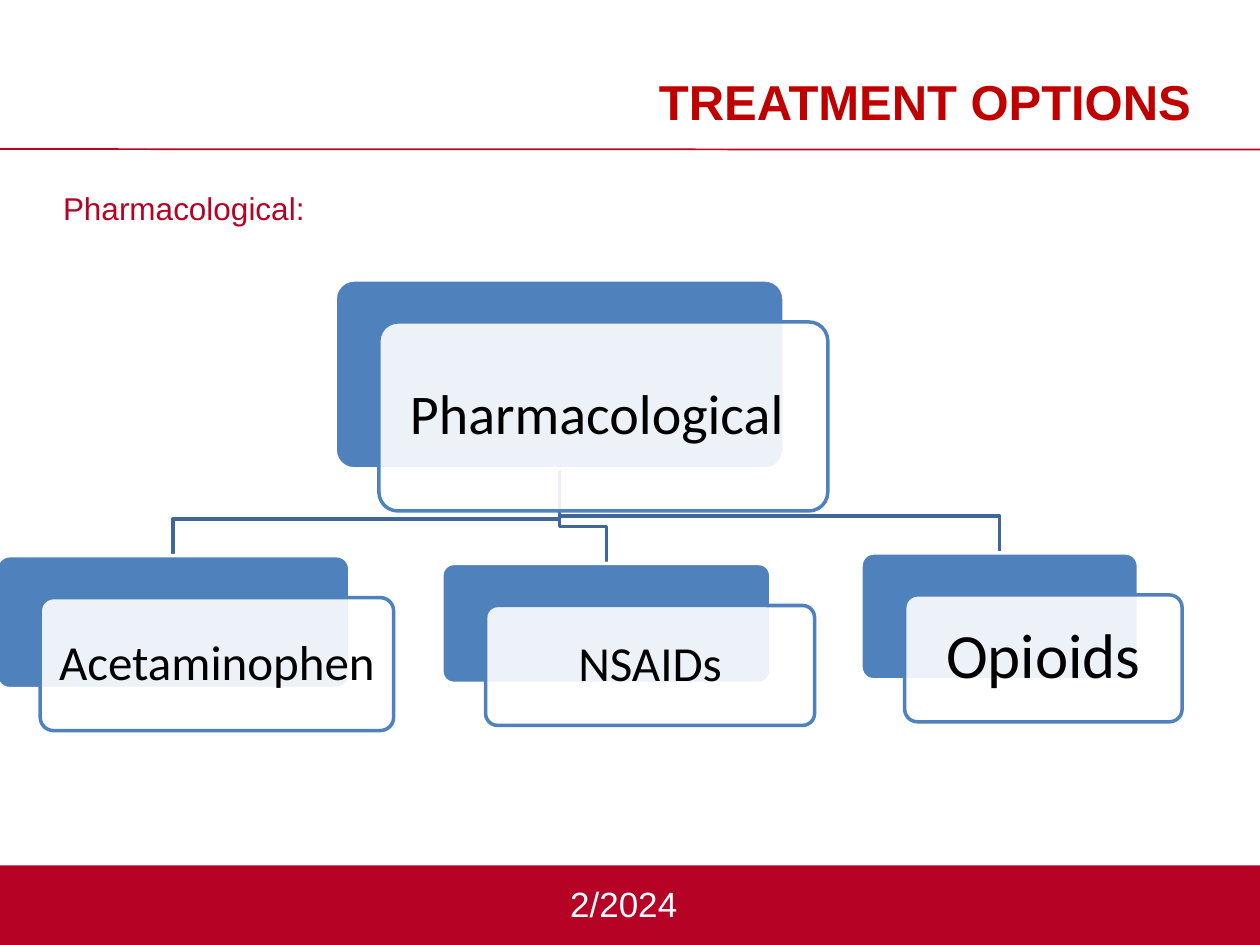
from dataclasses import dataclass

from lxml.etree import SubElement
from pptx import Presentation
from pptx.dml.color import RGBColor
from pptx.enum.shapes import MSO_CONNECTOR as Connector, MSO_SHAPE as Preset
from pptx.enum.text import MSO_ANCHOR as Anchor, PP_ALIGN as Align
from pptx.oxml.ns import qn
from pptx.util import Pt

RED = "B60225"
BLUE = "4F81BD"
WHITE = "FFFFFF"
FRONT_SHIFT = (25, 24)
ELBOW_RISE = 21


@dataclass(frozen=True)
class Card:
    label: str
    left: float
    top: float
    width: float
    height: float
    size: float

    @property
    def center(self) -> float:
        return self.left + self.width / 2

    @property
    def bottom(self) -> float:
        return self.top + self.height


@dataclass(frozen=True)
class Label:
    text: str
    left: float
    top: float
    width: float
    height: float
    size: float
    color: str
    align: Align
    margins: tuple
    bold: bool = False


def color_of(code: str) -> RGBColor:
    return RGBColor.from_string(code)


def paint(shape, fill: str | None, line: str | None) -> None:
    shape.shadow.inherit = False
    if fill:
        shape.fill.solid()
        shape.fill.fore_color.rgb = color_of(fill)
    else:
        shape.fill.background()
    if line:
        shape.line.color.rgb = color_of(line)
        shape.line.width = Pt(2)
    else:
        shape.line.fill.background()


def write(frame, text: str, font: str, size: float, color: str, align: Align,
          margins: tuple, bold: bool = False) -> None:
    frame.text = text
    frame.margin_left, frame.margin_top, frame.margin_right, frame.margin_bottom = map(Pt, margins)
    para = frame.paragraphs[0]
    para.alignment = align
    span = para.runs[0]
    span.font.name = font
    span.font.size = Pt(size)
    span.font.bold = bold
    span.font.color.rgb = color_of(color)


def draw_label(page, label: Label) -> None:
    box = page.shapes.add_textbox(Pt(label.left), Pt(label.top), Pt(label.width), Pt(label.height))
    box.text_frame.word_wrap = True
    box.text_frame.vertical_anchor = Anchor.TOP
    write(box.text_frame, label.text, "Arial", label.size, label.color,
          label.align, label.margins, label.bold)


def draw_branch(page, parent: Card, child: Card) -> None:
    turn = child.top - ELBOW_RISE
    points = [(parent.center, turn), (child.center, turn), (child.center, child.top)]
    builder = page.shapes.build_freeform(Pt(parent.center), Pt(parent.bottom))
    builder.add_line_segments([(Pt(x), Pt(y)) for x, y in points], close=False)
    paint(builder.convert_to_shape(), None, "3F6797")


def draw_panel(page, card: Card, shift: tuple, fill: str, line: str):
    panel = page.shapes.add_shape(
        Preset.ROUNDED_RECTANGLE, Pt(card.left + shift[0]), Pt(card.top + shift[1]),
        Pt(card.width), Pt(card.height))
    panel.adjustments[0] = 0.1
    paint(panel, fill, line)
    return panel


def draw_card(page, card: Card) -> None:
    draw_panel(page, card, (0, 0), BLUE, WHITE)
    front = draw_panel(page, card, FRONT_SHIFT, WHITE, BLUE)
    tint = front.fill._xPr.find(qn("a:solidFill"))[0]
    SubElement(tint, qn("a:alpha"), val="90000")
    frame = front.text_frame
    frame.word_wrap = False
    frame.vertical_anchor = Anchor.MIDDLE
    write(frame, card.label, "Calibri", card.size, "000000", Align.CENTER, (9, 9, 9, 9))
    frame.paragraphs[0].line_spacing = 0.9


def draw_frame(page) -> None:
    band = page.shapes.add_shape(Preset.RECTANGLE, Pt(0), Pt(494.5), Pt(720), Pt(45.5))
    paint(band, RED, None)
    rule = page.shapes.add_connector(Connector.STRAIGHT, Pt(0), Pt(85.2), Pt(720), Pt(85.5))
    rule.line.color.rgb = color_of(RED)
    rule.line.width = Pt(1)
    SubElement(rule._element.spPr, qn("a:effectLst"))


LABELS = [
    Label("2/2024", 0, 501, 720, 39, 20, WHITE, Align.CENTER, (0, 3.6, 7.2, 3.6)),
    Label("Pharmacological:", 36, 108, 675, 378, 18, RED, Align.LEFT, (0, 0, 0, 0)),
    Label("TREATMENT OPTIONS", 373, 37.5, 311, 30, 28, "C00000", Align.CENTER,
          (0, 3.6, 0, 3.6), True),
]
ROOT = Card("Pharmacological ", 191.5, 160, 256.5, 108, 32)
DRUGS = [
    Card("Acetaminophen", -2, 317.5, 202, 76, 28),
    Card("NSAIDs", 252.5, 322, 188, 68.5, 28),
    Card("Opioids", 492, 316, 158.5, 72.5, 36),
]


def main() -> None:
    deck = Presentation()
    deck.slide_width, deck.slide_height = Pt(720), Pt(540)
    page = deck.slides.add_slide(deck.slide_layouts[6])
    draw_frame(page)
    for label in LABELS:
        draw_label(page, label)
    for drug in reversed(DRUGS):
        draw_branch(page, ROOT, drug)
    for card in [ROOT, *DRUGS]:
        draw_card(page, card)
    deck.save("out.pptx")


if __name__ == "__main__":
    main()
